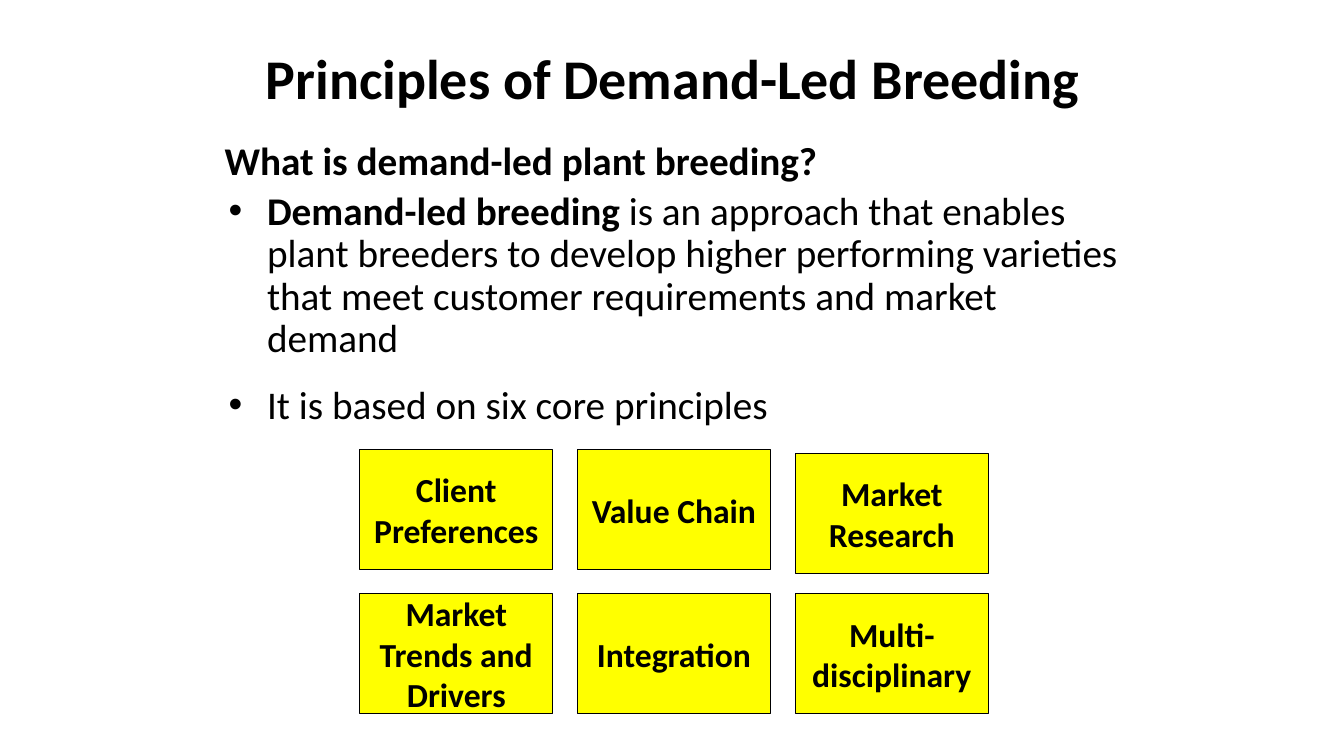
import pptx
import pptx.util
import pptx.dml.color
import pptx.enum.shapes
import pptx.enum.text
import pptx.oxml.ns
import lxml.etree

Inches, Pt = pptx.util.Inches, pptx.util.Pt
RGB = pptx.dml.color.RGBColor
ALIGN = pptx.enum.text.PP_ALIGN
ANCHOR = pptx.enum.text.MSO_ANCHOR

THEME = {
    "font": "Calibri",
    "ink": RGB(0, 0, 0),
    "box": RGB(255, 255, 0),
    "title": Pt(40),
    "body": Pt(28),
    "label": Pt(24),
}

deck = pptx.Presentation()
deck.slide_width, deck.slide_height = Inches(13.33), Inches(7.5)
page = deck.slides.add_slide(deck.slide_layouts[6])


def style(para, size, bold=None, align=ALIGN.LEFT):
    para.font.name = THEME["font"]
    para.font.size = THEME[size]
    para.font.color.rgb = THEME["ink"]
    para.font.bold = bold
    para.alignment = align


def add_text_frame(left, top, width, height, anchor=ANCHOR.TOP):
    """Add a wrapping text box, measured in inches, and return its text frame."""
    box = page.shapes.add_textbox(*map(Inches, (left, top, width, height)))
    box.text_frame.word_wrap = True
    box.text_frame.vertical_anchor = anchor
    return box.text_frame


# Title and question
title = add_text_frame(2.17, 0.3, 9, 0.92, ANCHOR.MIDDLE).paragraphs[0]
title.text = "Principles of Demand-Led Breeding"
style(title, "title", True, ALIGN.CENTER)

question = add_text_frame(2.13, 1.3, 7.22, 0.57).paragraphs[0]
question.text = "What is demand-led plant breeding?"
style(question, "body", True)

# Bullets, each a list of (text, bold) spans
bullets = [
    [("Demand-led breeding ", True),
     ("is an approach that enables plant breeders to develop higher performing "
      "varieties that meet customer requirements and market demand", False)],
    [("It is based on six core principles", False)],
]
body = add_text_frame(2.17, 1.85, 9.18, 2.48)
for index, spans in enumerate(bullets):
    para = body.add_paragraph() if index else body.paragraphs[0]
    for text, bold in spans:
        span = para.add_run()
        span.text = text
        span.font.bold = bold
    style(para, "body")
    para.line_spacing = 0.9
    para.space_before = Pt(5.6)
    para.space_after = Pt(12)
    properties = para._p.get_or_add_pPr()
    properties.set("marL", str(Inches(0.38)))
    properties.set("indent", str(-Inches(0.38)))
    bullet_font = lxml.etree.Element(pptx.oxml.ns.qn("a:buFont"), typeface="Arial")
    bullet_mark = lxml.etree.Element(pptx.oxml.ns.qn("a:buChar"), char="•")
    spacing_after = properties.find(pptx.oxml.ns.qn("a:spcAft"))
    spacing_after.addnext(bullet_font)
    bullet_font.addnext(bullet_mark)

# Six principles in a grid of three columns and two rows
principles = [
    ["Client Preferences", "Value Chain", "Market Research"],
    ["Market Trends and Drivers", "Integration", "Multi-disciplinary"],
]
grid_left, grid_top = 3.57, 4.46
column_pitch, row_pitch = 2.16, 1.43
box_width, box_height = 1.91, 1.19
lowered = {"Market Research": 0.04}

for row, names in enumerate(principles):
    for column, name in enumerate(names):
        left = grid_left + column * column_pitch
        top = grid_top + row * row_pitch + lowered.get(name, 0)
        box = page.shapes.add_shape(
            pptx.enum.shapes.MSO_SHAPE.RECTANGLE,
            *map(Inches, (left, top, box_width, box_height)))
        box.shadow.inherit = False
        box.fill.solid()
        box.fill.fore_color.rgb = THEME["box"]
        box.line.color.rgb = THEME["ink"]
        box.line.width = Pt(0.75)
        box.text_frame.word_wrap = True
        box.text_frame.vertical_anchor = ANCHOR.MIDDLE
        label = box.text_frame.paragraphs[0]
        label.text = name
        style(label, "label", True, ALIGN.CENTER)

deck.save("out.pptx")
